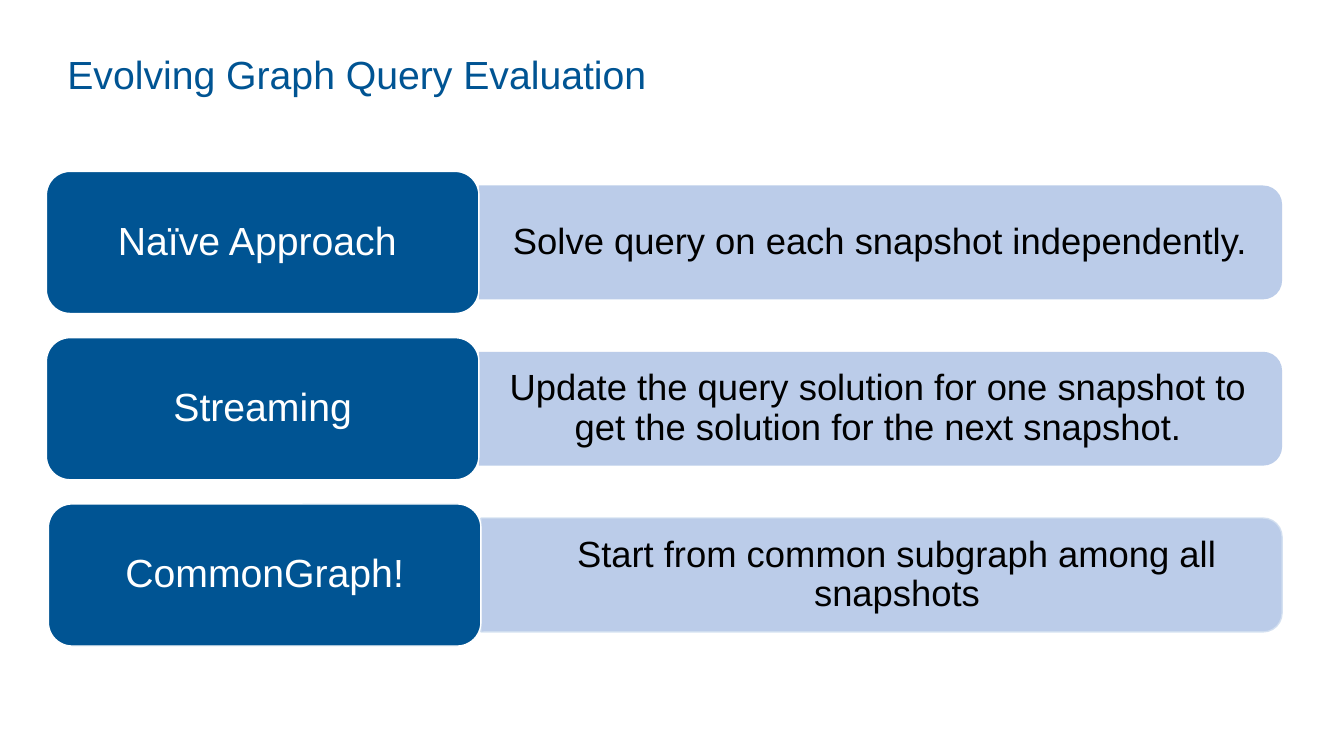
from lxml.etree import SubElement
from pptx import Presentation
from pptx.dml.color import RGBColor
from pptx.enum.shapes import MSO_SHAPE as Kind
from pptx.enum.text import MSO_ANCHOR as Anchor, PP_ALIGN as Align
from pptx.oxml.ns import qn
from pptx.util import Cm, Pt

BLUE, PALE, EDGE, WHITE, BLACK = "005493", "B4C7E7", "D2DFF0", "FFFFFF", "000000"
RIGHT = 32.31
ROWS = [
    (1.17, 20.24, None, "Naïve Approach ",
     "Solve query on each snapshot independently."),
    (1.17, 20.14, None, "Streaming",
     "Update the query solution for one snapshot to get the solution for the next snapshot."),
    (1.22, 20.98, EDGE, "CommonGraph!",
     "Start from common subgraph among all snapshots"),
]


def paint(fmt, color):
    fmt.solid()
    fmt.fore_color.rgb = RGBColor.from_string(color)


def fade(part):
    tint = next(part.iter(qn("a:srgbClr")))
    SubElement(tint, qn("a:alpha")).set("val", "90000")


def write(shape, text, size, color, align, pad):
    frame = shape.text_frame
    frame.word_wrap = True
    frame.vertical_anchor = Anchor.MIDDLE
    frame.margin_left = frame.margin_right = Cm(pad)
    frame.margin_top = frame.margin_bottom = Cm(pad / 2)
    para = frame.paragraphs[0]
    para.text = text
    para.alignment = align
    para.line_spacing = 0.9
    para.font.name = "Arial"
    para.font.size = Pt(size)
    para.font.color.rgb = RGBColor.from_string(color)


def block(slide, kind, box, fill, edge):
    shape = slide.shapes.add_shape(kind, *map(Cm, box))
    shape.shadow.inherit = False
    paint(shape.fill, fill)
    if edge:
        paint(shape.line.fill, edge)
        shape.line.width = Pt(1)
    else:
        shape.line.fill.background()
    return shape


def note(slide, box, text, size, color, align, pad):
    write(slide.shapes.add_textbox(*map(Cm, box)), text, size, color, align, pad)


def band(slide, left, mid, width, edge, text):
    span, thick, tall = RIGHT - left, 2.87, 2.59
    box = (left + (span - thick) / 2, mid - span / 2, thick, span)
    bar = block(slide, Kind.ROUND_2_SAME_RECTANGLE, box, PALE, edge)
    bar.rotation = 90
    fade(bar.fill._xPr.find(qn("a:solidFill")))
    if edge:
        fade(bar.line._ln)
    note(slide, (left, mid - tall / 2, width, tall), text, 26, BLACK, Align.CENTER, 0.28)


def row(slide, left, top, width, edge, name, text):
    wide, tall = 10.9, 3.58
    band(slide, left + wide, top + tall / 2, width, edge, text)
    label = block(slide, Kind.ROUNDED_RECTANGLE, (left, top, wide, tall), BLUE, WHITE)
    write(label, name, 28, WHITE, Align.CENTER, 0.3)


def main():
    deck = Presentation()
    deck.slide_width, deck.slide_height = Cm(33.87), Cm(19.05)
    slide = deck.slides.add_slide(deck.slide_layouts[6])
    note(slide, (1.45, 1.12, 30.84, 1.63), "Evolving Graph Query Evaluation",
         28, BLUE, Align.LEFT, 0.25)
    for i, (left, *rest) in enumerate(ROWS):
        row(slide, left, 4.32 + 4.19 * i, *rest)
    deck.save("out.pptx")


if __name__ == "__main__":
    main()
